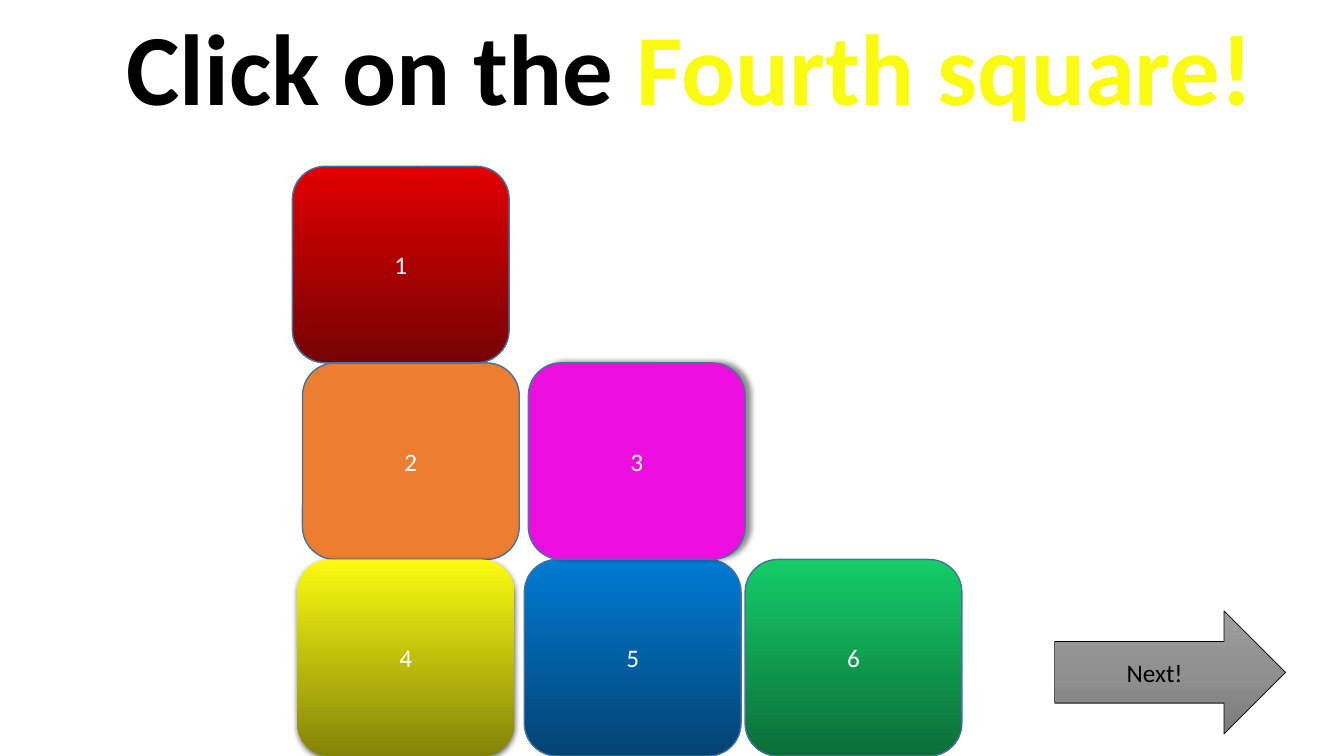
from copy import deepcopy

from lxml import etree
from pptx import Presentation
from pptx.dml.color import RGBColor
from pptx.enum import shapes, text
from pptx.oxml import ns
from pptx.util import Inches, Pt

COLOURS = {
    "black": "000000", "white": "FFFFFF", "edge": "43739E",
    "red": "E30000", "dark red": "760303",
    "orange": "ED7D31", "magenta": "EC0EDF",
    "yellow": "FBFB11", "olive": "838309",
    "blue": "007BD3", "navy": "034373",
    "green": "14CD68", "dark green": "0B6E38",
    "light grey": "9D9D9D", "grey": "909090", "dark grey": "7C7C7C",
}
SQUARE_WIDTH, SQUARE_HEIGHT, FIRST_ROW_TOP = 2.15, 1.95, 1.65


def rgb(name):
    return RGBColor.from_string(COLOURS[name])


class CountingSlide:
    font = "Calibri"

    def __init__(self, slide):
        self.slide = slide

    def add_words(self, paragraph, words, size, colour, bold=False):
        run = paragraph.add_run()
        run.text = words
        run.font.name = self.font
        run.font.size = Pt(size)
        run.font.bold = bold
        run.font.color.rgb = rgb(colour)

    def title(self, box, parts):
        frame = self.slide.shapes.add_textbox(*map(Inches, box)).text_frame
        frame.word_wrap = False
        frame.auto_size = text.MSO_AUTO_SIZE.SHAPE_TO_FIT_TEXT
        heading = frame.paragraphs[0]
        heading.alignment = text.PP_ALIGN.CENTER
        for words, colour in parts:
            self.add_words(heading, words, 72, colour, bold=True)

    def paint(self, shape, colours):
        """Fill with one colour, or with an even top-to-bottom gradient."""
        if len(colours) == 1:
            shape.fill.solid()
            shape.fill.fore_color.rgb = rgb(colours[0])
            return
        shape.fill.gradient()
        shape.fill.gradient_angle = 270
        stop_list = shape._element.spPr.find(".//" + ns.qn("a:gsLst"))
        for _ in colours[2:]:
            stop_list.append(deepcopy(stop_list[-1]))
        for i, (stop, colour) in enumerate(zip(shape.fill.gradient_stops, colours)):
            stop.position = i / (len(colours) - 1)
            stop.color.rgb = rgb(colour)

    def cast_shadow(self, shape, opacity, blur, distance, angle):
        effects = shape._element.spPr.find(ns.qn("a:effectLst"))
        outer = etree.SubElement(
            effects, ns.qn("a:outerShdw"), blurRad=str(Pt(blur)),
            dist=str(Pt(distance)), dir=str(angle * 60000), rotWithShape="0")
        tint = etree.SubElement(outer, ns.qn("a:srgbClr"), val=COLOURS["black"])
        etree.SubElement(tint, ns.qn("a:alpha"), val=str(opacity * 1000))

    def block(self, kind, box, label, colours, ink, edge, edge_width, shadow=None):
        shape = self.slide.shapes.add_shape(kind, *map(Inches, box))
        shape.shadow.inherit = False
        self.paint(shape, colours)
        if edge:
            shape.line.color.rgb = rgb(edge)
            shape.line.width = Pt(edge_width)
        else:
            shape.line.fill.background()
        if shadow:
            self.cast_shadow(shape, *shadow)
        shape.text_frame.vertical_anchor = text.MSO_ANCHOR.MIDDLE
        caption = shape.text_frame.paragraphs[0]
        caption.alignment = text.PP_ALIGN.CENTER
        self.add_words(caption, label, 18, ink)

    def square(self, label, left, row, colours, edge="edge", shadow=None):
        top = FIRST_ROW_TOP + row * SQUARE_HEIGHT
        self.block(shapes.MSO_SHAPE.ROUNDED_RECTANGLE,
                   (left, top, SQUARE_WIDTH, SQUARE_HEIGHT),
                   label, colours, "white", edge, 1, shadow)

    def next_arrow(self, box, label):
        self.block(shapes.MSO_SHAPE.RIGHT_ARROW, box, label,
                   ("light grey", "grey", "dark grey"), "black", "black", 0.5)


def main():
    deck = Presentation()
    deck.slide_width, deck.slide_height = Inches(13.33), Inches(7.5)
    page = CountingSlide(deck.slides.add_slide(deck.slide_layouts[6]))

    page.title((1.1, 0, 11.49, 1.31),
               [("Click on the ", "black"), ("Fourth square!", "yellow")])
    page.square("2", 3, 1, ["orange"])
    page.square("5", 5.2, 2, ["blue", "navy"])
    page.square("6", 7.39, 2, ["green", "dark green"])
    page.square("3", 5.24, 1, ["magenta"], shadow=(43, 4, 4, 347))
    page.square("4", 2.95, 2, ["yellow", "olive"], edge=None,
                shadow=(63, 4.5, 1.5, 90))
    page.square("1", 2.9, 0, ["red", "dark red"])
    page.next_arrow((10.46, 6.06, 2.29, 1.22), "Next!")

    deck.save("out.pptx")


if __name__ == "__main__":
    main()
